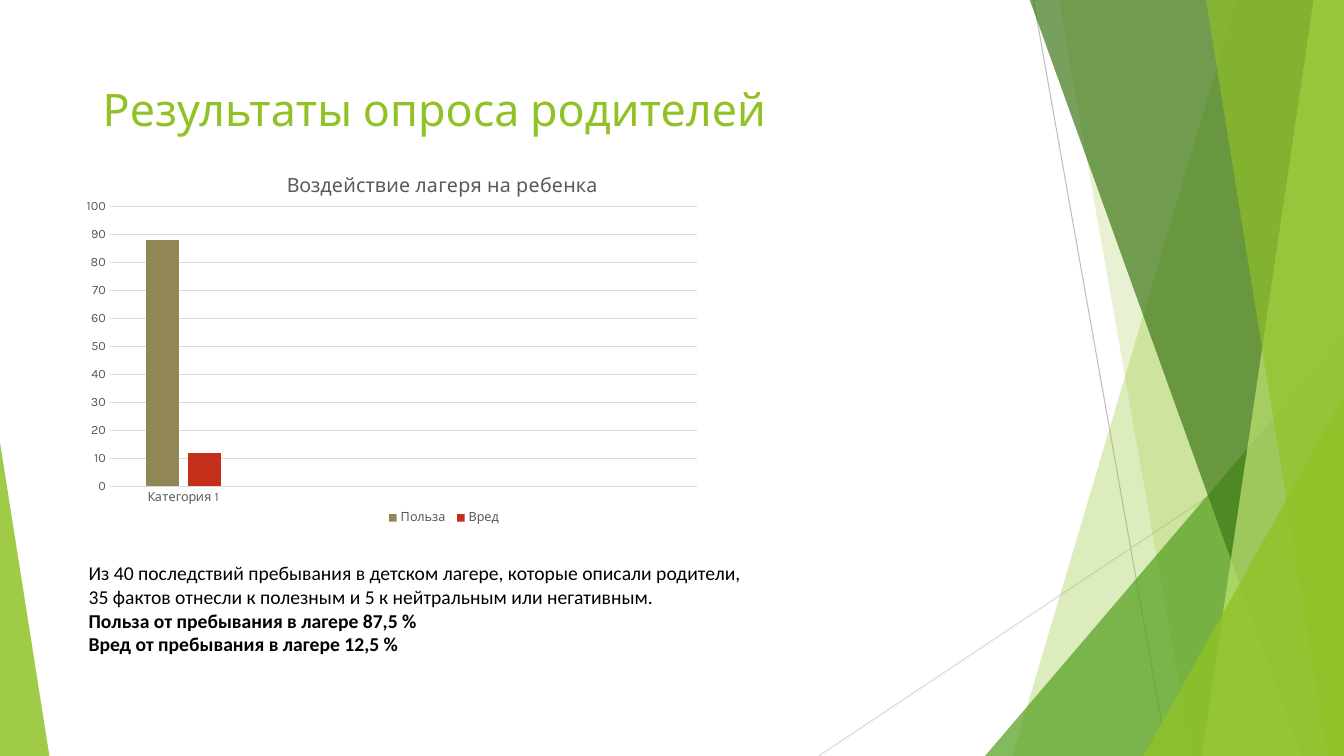
import pptx
import pptx.chart.data
import pptx.dml.color
import pptx.enum.chart
import pptx.enum.shapes
import pptx.enum.text
import pptx.oxml
import pptx.oxml.ns
import pptx.util
from lxml import etree

Inches = pptx.util.Inches
Pt = pptx.util.Pt
SHAPES = pptx.enum.shapes.MSO_SHAPE
TICK_NONE = pptx.enum.chart.XL_TICK_MARK.NONE
WIDTH, HEIGHT = 13.33, 7.5


def paint(target, color):
    """Give a fill or line format a solid colour."""
    fill = target if hasattr(target, "solid") else target.fill
    fill.solid()
    fill.fore_color.rgb = pptx.dml.color.RGBColor.from_string(color)


def style(font, size, color, name="Karla", bold=False):
    font.size, font.name, font.bold = Pt(size), name, bold
    paint(font.fill, color)


deck = pptx.Presentation()
deck.slide_width, deck.slide_height = Inches(WIDTH), Inches(HEIGHT)
page = deck.slides.add_slide(deck.slide_layouts[6])

# Thin lines behind the facets
for x1, y1, x2, y2, color in [
    (10.25, 0, 11.58, HEIGHT, "BFBFBF"),
    (WIDTH, 4.03, 8.12, HEIGHT, "D9D9D9"),
]:
    line = page.shapes.add_connector(
        pptx.enum.shapes.MSO_CONNECTOR.STRAIGHT, Inches(x1), Inches(y1), Inches(x2), Inches(y2))
    line.line.width = Pt(0.75)
    paint(line.line, color)
    etree.SubElement(line._element.spPr, pptx.oxml.ns.qn("a:effectLst"))

# Facets from back to front: strips reach the right edge from a slanted left side
# (top x, bottom x); triangles have left, top, width and the place of the tip
facets = [
    ("strip", (12.27, 10.04), "90C226", 30),
    ("strip", (10.5, 11.82), "90C226", 20),
    ("triangle", (9.77, 3.33, 3.56, 1), "54A021", 72),
    ("strip", (10.21, 12.91), "3F7819", 70),
    ("strip", (13.03, 11.92), "C0E474", 70),
    ("strip", (11.96, 13.17), "90C226", 65),
    ("triangle", (11.34, 3.93, 1.99, 1), "90C226", 80),
    ("triangle", (0, 4.39, 0.49, 0), "90C226", 85),
]
for kind, place, color, opacity in facets:
    if kind == "strip":
        top_x, bottom_x = place
        outline = page.shapes.build_freeform(Inches(top_x), Inches(-0.01))
        outline.add_line_segments([
            (Inches(x), Inches(y))
            for x, y in [(WIDTH, -0.01), (WIDTH, HEIGHT), (bottom_x, HEIGHT)]])
        shape = outline.convert_to_shape()
    else:
        left, top, width, tip = place
        shape = page.shapes.add_shape(
            SHAPES.ISOSCELES_TRIANGLE, Inches(left), Inches(top), Inches(width), Inches(HEIGHT - top))
        shape.adjustments[0] = tip
    shape.shadow.inherit = False
    shape.line.fill.background()
    paint(shape.fill, color)
    color_element = shape._element.spPr.find(".//" + pptx.oxml.ns.qn("a:srgbClr"))
    etree.SubElement(color_element, pptx.oxml.ns.qn("a:alpha"), val=str(opacity * 1000))

# Survey chart
survey = pptx.chart.data.CategoryChartData()
survey.categories = ["Категория 1", "", "", ""]
survey.add_series("Польза ", [88, None, None, None])
survey.add_series("Вред ", [12, None, None, None])
chart = page.shapes.add_chart(
    pptx.enum.chart.XL_CHART_TYPE.COLUMN_CLUSTERED,
    Inches(0.76), Inches(1.56), Inches(7.32), Inches(3.69), survey).chart
style(chart.font, 10, "000000")
chart.has_title = True
chart.chart_title.include_in_layout = False
chart.chart_title.text_frame.text = "Воздействие лагеря на ребенка"
style(chart.chart_title.text_frame.paragraphs[0].runs[0].font, 14, "595959")

chart.has_legend = True
chart.legend.position = pptx.enum.chart.XL_LEGEND_POSITION.BOTTOM
chart.legend.include_in_layout = False
style(chart.legend.font, 9, "595959")

columns = chart.plots[0]
columns.vary_by_categories = False
columns.gap_width, columns.overlap = 219, -27
for series, color in zip(columns.series, ["918655", "C42F1A"]):
    paint(series.format.fill, color)

for axis in (chart.category_axis, chart.value_axis):
    axis.major_tick_mark = axis.minor_tick_mark = TICK_NONE
    style(axis.tick_labels.font, 9, "595959")
chart.value_axis.minimum_scale, chart.value_axis.maximum_scale = 0, 100
chart.value_axis.major_unit = 10
chart.value_axis.format.line.fill.background()
for rule in (chart.category_axis.format.line, chart.value_axis.major_gridlines.format.line):
    rule.width = Pt(0.75)
    paint(rule, "D9D9D9")

# Fixed places of the chart title and the plot, as shares of the chart
chart_element = chart._chartSpace.chart
for parent, index, target, shares in [
    (chart_element.find(pptx.oxml.ns.qn("c:title")), 1, "", {"x": 0.28, "y": 0.03}),
    (chart_element.plotArea, 0, '<c:layoutTarget val="inner"/>',
     {"x": 0.045, "y": 0.133, "w": 0.795, "h": 0.752}),
]:
    for old_layout in parent.findall(pptx.oxml.ns.qn("c:layout")):
        parent.remove(old_layout)
    sizes = "".join(f'<c:{name} val="{share}"/>' for name, share in shares.items())
    parent.insert(index, pptx.oxml.parse_xml(
        f'<c:layout {pptx.oxml.ns.nsdecls("c")}><c:manualLayout>{target}'
        f'<c:xMode val="edge"/><c:yMode val="edge"/>{sizes}</c:manualLayout></c:layout>'))

# Heading and summary: place, font, size, colour, then (text, bold) lines
texts = [
    ((0.92, 0.76, 9.4, 0.8), "Karla", 32, "90C226", [("Результаты опроса родителей", False)]),
    ((0.78, 5.52, 8.15, 1.04), "Calibri", 14, "000000", [
        ("Из 40 последствий пребывания в детском лагере, которые описали родители,", False),
        ("35 фактов отнесли к полезным и 5 к нейтральным или негативным.", False),
        ("Польза от пребывания в лагере 87,5 %", True),
        ("Вред от пребывания в лагере 12,5 %", True),
    ]),
]
for place, font_name, size, color, lines in texts:
    box = page.shapes.add_textbox(*map(Inches, place))
    box.text_frame.word_wrap = True
    box.text_frame.vertical_anchor = pptx.enum.text.MSO_ANCHOR.TOP
    for number, (text, bold) in enumerate(lines):
        para = box.text_frame.add_paragraph() if number else box.text_frame.paragraphs[0]
        span = para.add_run()
        span.text = text
        style(span.font, size, color, font_name, bold)

deck.save("out.pptx")
